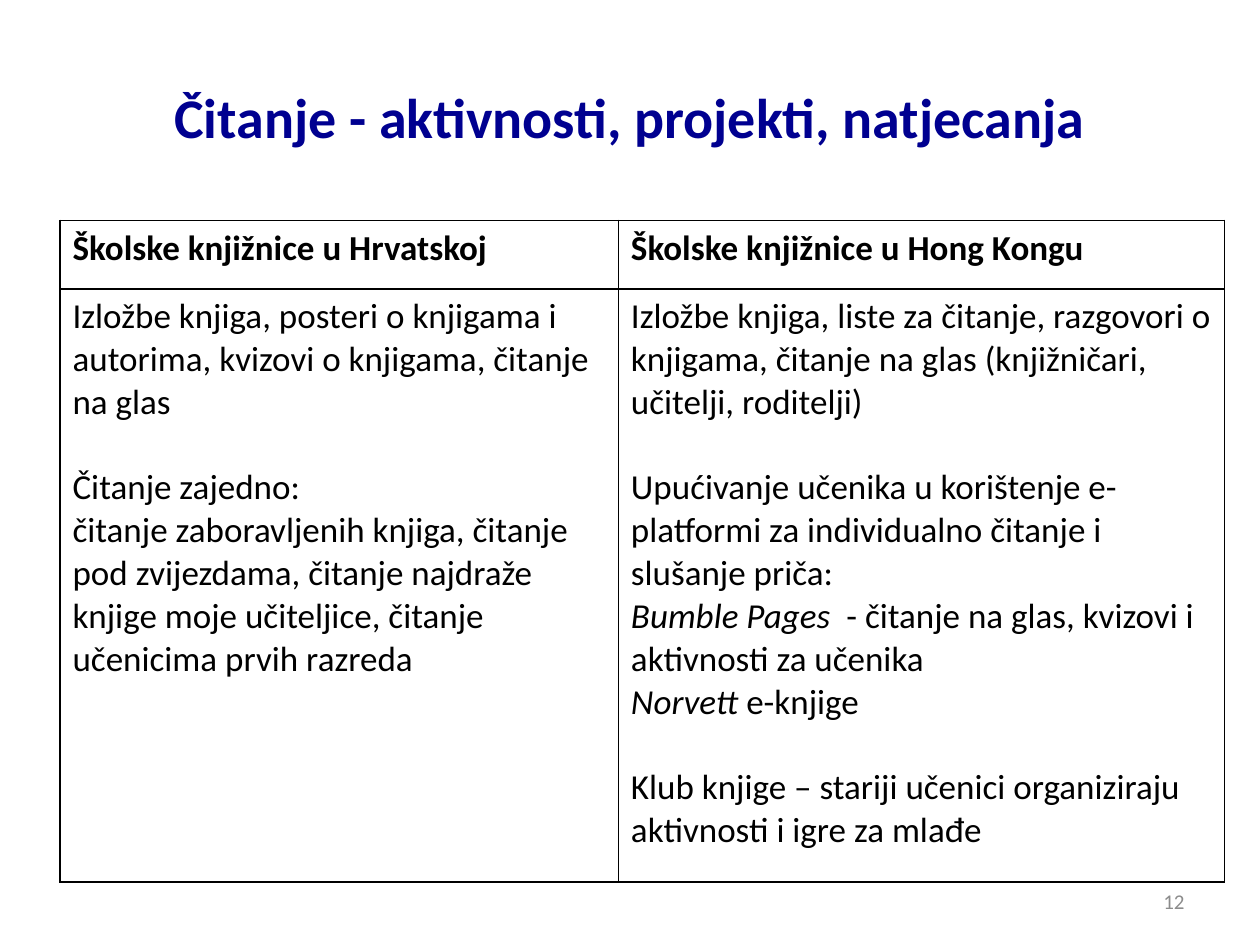
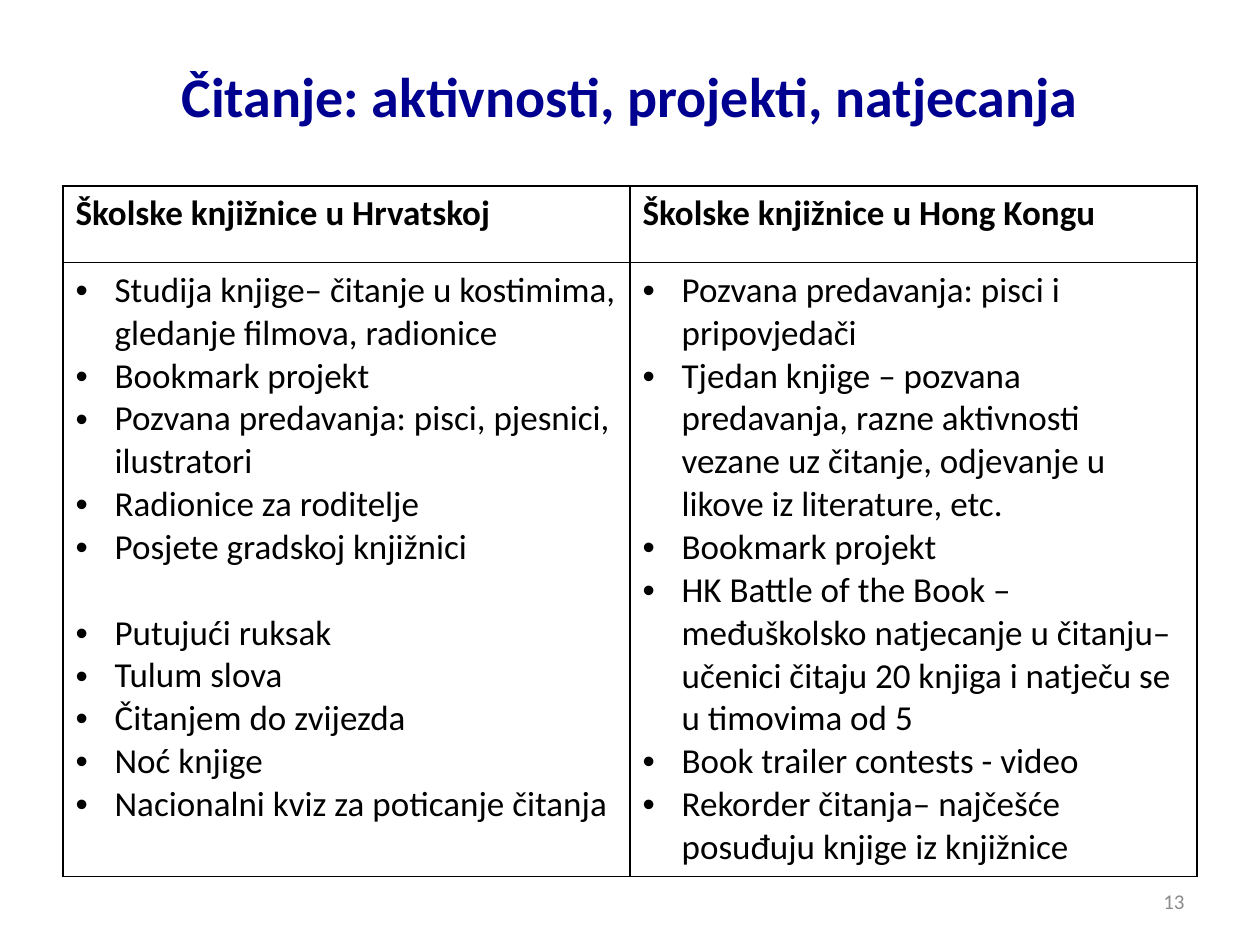
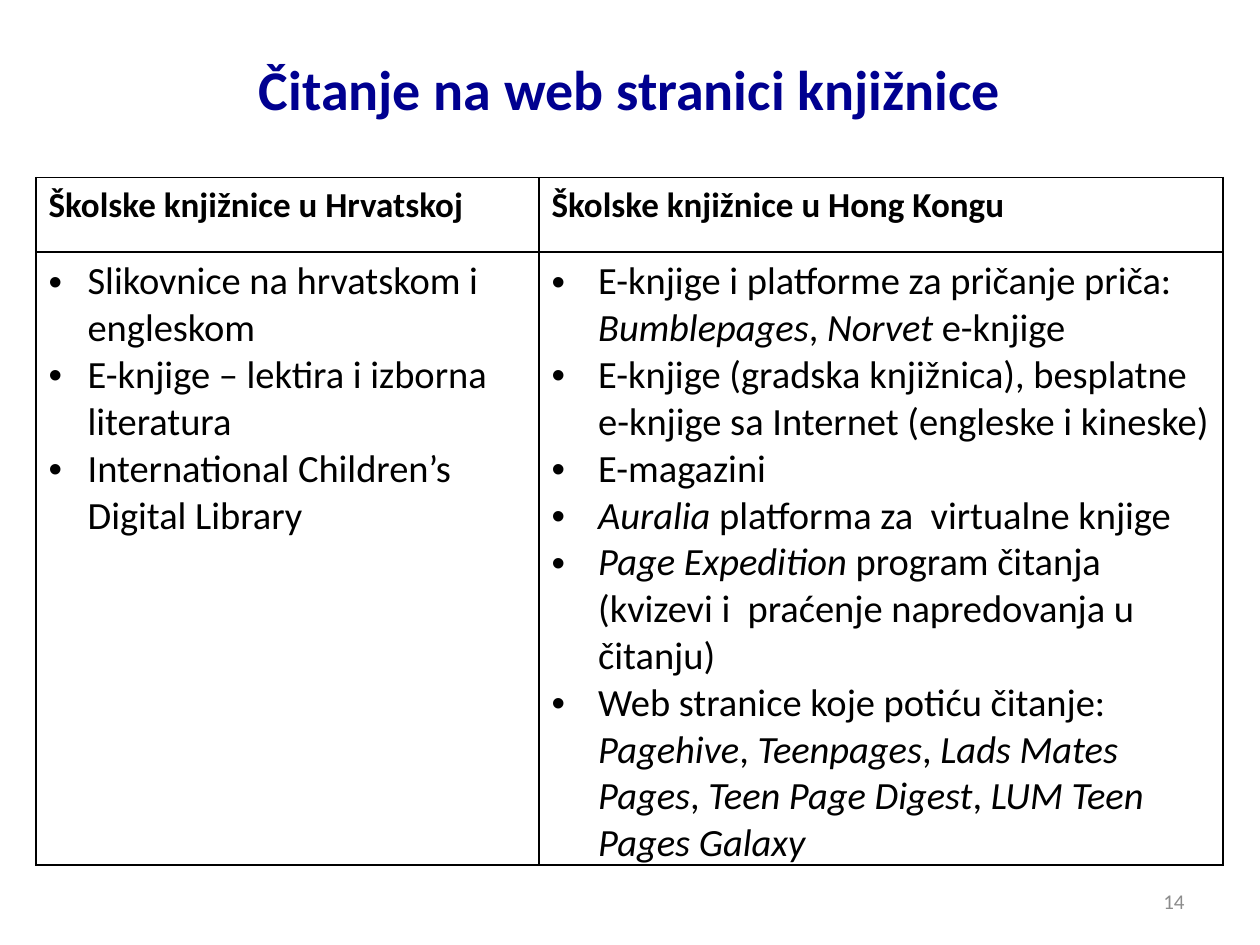
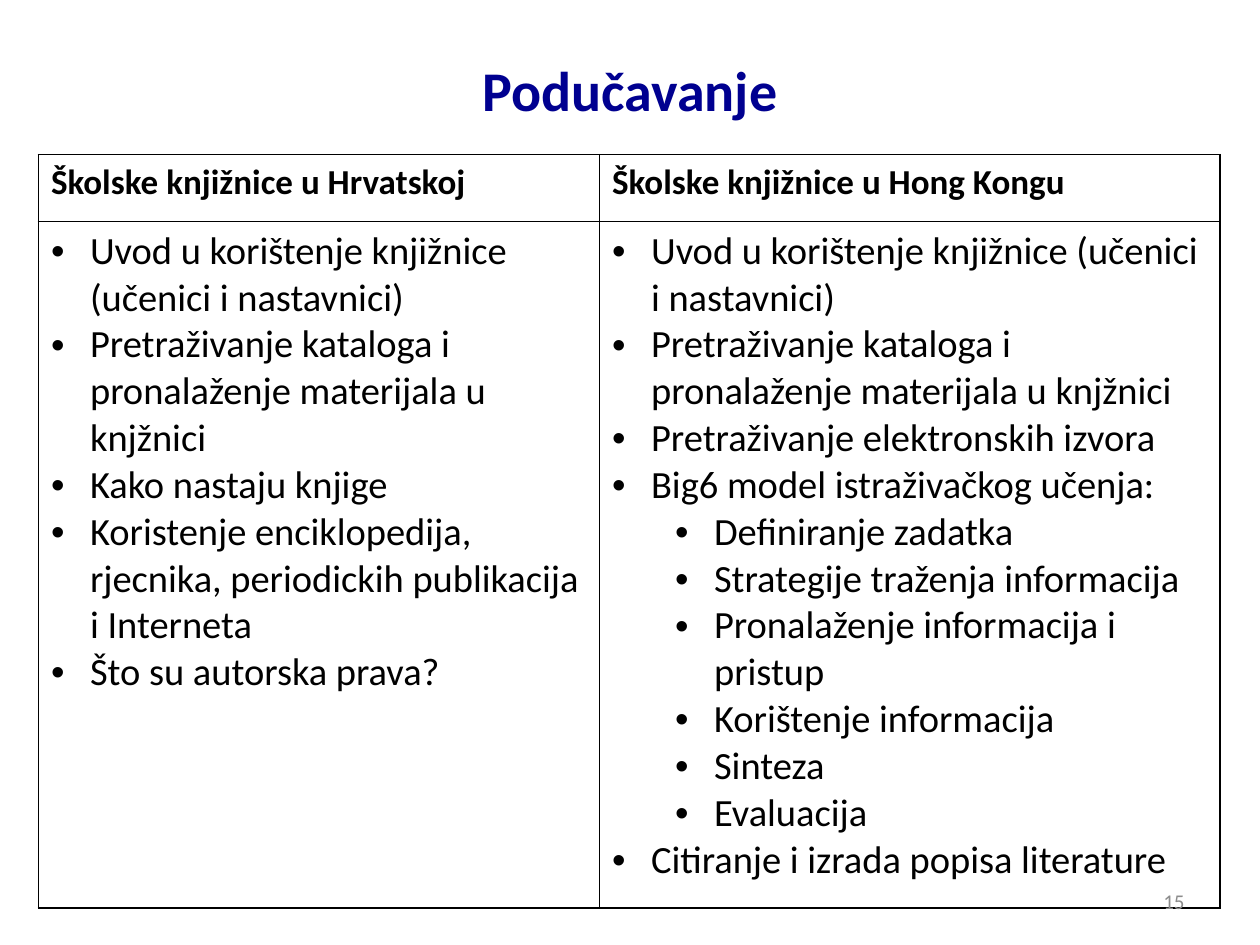
from dataclasses import dataclass

from lxml.etree import SubElement
from pptx import Presentation
from pptx.dml.color import RGBColor
from pptx.enum.text import MSO_ANCHOR as Anchor, PP_ALIGN as Align
from pptx.oxml.ns import qn
from pptx.util import Inches, Pt

# Shared look
SLIDE_WIDTH, SLIDE_HEIGHT = Inches(10), Inches(7.5)
NAVY = RGBColor(0x00, 0x00, 0x90)
BLACK = RGBColor(0x00, 0x00, 0x00)
GREY = RGBColor(0x8C, 0x8C, 0x8C)
TITLE_STYLE = {"name": "Calibri", "size": Pt(32), "bold": True}
HEADING_STYLE = {"name": "Calibri", "size": Pt(20), "bold": True}
BODY_STYLE = {"name": "Calibri", "bold": False}
NUMBER_STYLE = {"name": "Calibri", "size": Pt(12)}
HEADINGS = ("Školske knjižnice u Hrvatskoj", "Školske knjižnice u Hong Kongu")
FIRST_NUMBER = 12
LINE_HEIGHT = 1.22  # of the text size
LEVEL_STEP = 0.5


@dataclass
class Item:
    """A paragraph; *stars* enclose italics, gap leaves one line free above."""
    text: str
    level: int = 0
    gap: bool = False


@dataclass
class Comparison:
    """Two columns side by side; lengths are percentages of the slide."""
    title: str
    title_height: float
    left: float
    top: float
    widths: tuple
    heights: tuple
    croatia: list
    hong_kong: list
    size: int = 20
    hangs: tuple = (0.31, 0.31)  # bullet indents in inches, 0 for plain text


COMPARISONS = [
    Comparison(
        "Čitanje - aktivnosti, projekti, natjecanja", 16.67,
        4.76, 23.33, (44.32, 48.1), (7.25, 62.75),
        [
            "Izložbe knjiga, posteri o knjigama i autorima, kvizovi o knjigama, "
            "čitanje na glas",
            Item("Čitanje zajedno:", gap=True),
            "čitanje zaboravljenih knjiga, čitanje pod zvijezdama, čitanje "
            "najdraže knjige moje učiteljice, čitanje učenicima prvih razreda",
        ],
        [
            "Izložbe knjiga, liste za čitanje, razgovori o knjigama, čitanje na "
            "glas (knjižničari, učitelji, roditelji)",
            Item("Upućivanje učenika u korištenje e-platformi za individualno "
                 "čitanje i slušanje priča:", gap=True),
            "*Bumble Pages  *- čitanje na glas, kvizovi i aktivnosti za učenika",
            "*Norvett* e-knjige",
            Item("Klub knjige – stariji učenici organiziraju aktivnosti i igre "
                 "za mlađe", gap=True),
        ],
        hangs=(0, 0)),
    Comparison(
        "Čitanje: aktivnosti, projekti, natjecanja", 12.1,
        5, 19.67, (45, 45), (8.13, 64.93),
        [
            "Studija knjige– čitanje u kostimima, gledanje filmova, radionice",
            "Bookmark projekt",
            "Pozvana predavanja: pisci, pjesnici, ilustratori",
            "Radionice za roditelje",
            "Posjete gradskoj knjižnici",
            Item("Putujući ruksak", gap=True),
            "Tulum slova",
            "Čitanjem do zvijezda",
            "Noć knjige",
            "Nacionalni kviz za poticanje čitanja",
        ],
        [
            "Pozvana predavanja: pisci i pripovjedači",
            "Tjedan knjige – pozvana predavanja, razne aktivnosti vezane uz "
            "čitanje, odjevanje u likove iz literature, etc.",
            "Bookmark projekt",
            "HK Battle of the Book – međuškolsko natjecanje u čitanju– učenici "
            "čitaju 20 knjiga i natječu se u timovima od 5",
            "Book trailer contests - video",
            "Rekorder čitanja– najčešće posuđuju knjige iz knjižnice",
        ]),
    Comparison(
        "Čitanje na web stranici knjižnice", 10.65,
        2.86, 18.8, (39.92, 54.3), (7.87, 61.6),
        [
            "Slikovnice na hrvatskom i engleskom",
            "E-knjige – lektira i izborna literatura",
            "International Children’s Digital Library",
        ],
        [
            "E-knjige i platforme za pričanje priča: *Bumblepages*, *Norvet* "
            "e-knjige",
            "E-knjige (gradska knjižnica), besplatne e-knjige sa Internet "
            "(engleske i kineske)",
            "E-magazini",
            "*Auralia* platforma za  virtualne knjige",
            "*Page Expedition *program čitanja (kvizevi i  praćenje napredovanja "
            "u čitanju)",
            "Web stranice koje potiću čitanje: *Pagehive*, *Teenpages*, "
            "*Lads Mates Pages*, *Teen Page Digest*, *LUM Teen Pages Galaxy*",
        ],
        size=22, hangs=(0.31, 0.37)),
    Comparison(
        "Podučavanje", 10.8,
        3.05, 16.37, (44.53, 49.25), (7.07, 72.67),
        [
            "Uvod u korištenje knjižnice (učenici i nastavnici)",
            "Pretraživanje kataloga i pronalaženje materijala u knjžnici",
            "Kako nastaju knjige",
            "Koristenje enciklopedija, rjecnika, periodickih publikacija i "
            "Interneta",
            "Što su autorska prava?",
        ],
        [
            "Uvod u korištenje knjižnice (učenici i nastavnici)",
            "Pretraživanje kataloga i pronalaženje materijala u knjžnici",
            "Pretraživanje elektronskih izvora",
            "Big6 model istraživačkog učenja:",
            Item("Definiranje zadatka", level=1),
            Item("Strategije traženja informacija", level=1),
            Item("Pronalaženje informacija i pristup", level=1),
            Item("Korištenje informacija", level=1),
            Item("Sinteza", level=1),
            Item("Evaluacija", level=1),
            "Citiranje i izrada popisa literature",
        ],
        size=22),
]


def across(percent):
    return round(SLIDE_WIDTH * percent / 100)


def down(percent):
    return round(SLIDE_HEIGHT * percent / 100)


# Text
def write(paragraph, text, style, color):
    for index, part in enumerate(text.split("*")):
        if part:
            run = paragraph.add_run()
            run.text = part
            for key, value in style.items():
                setattr(run.font, key, value)
            run.font.color.rgb = color
            if index % 2:
                run.font.italic = True


def add_bullet(paragraph, hang, level):
    properties = paragraph._p.get_or_add_pPr()
    properties.set("marL", str(Inches(hang + level * LEVEL_STEP)))
    properties.set("indent", str(-Inches(hang)))
    SubElement(properties, qn("a:buFont"), typeface="Arial")
    SubElement(properties, qn("a:buChar"), char="•")


def write_items(frame, items, size, hang):
    style = {**BODY_STYLE, "size": Pt(size)}
    for index, entry in enumerate(items):
        item = entry if isinstance(entry, Item) else Item(entry)
        paragraph = frame.add_paragraph() if index else frame.paragraphs[0]
        paragraph.level = item.level
        if hang:
            add_bullet(paragraph, hang, item.level)
        if item.gap:
            paragraph.space_before = Pt(size * LINE_HEIGHT)
        write(paragraph, item.text, style, BLACK)


def add_line_box(slide, text, box, style, color, align):
    frame = slide.shapes.add_textbox(*box).text_frame
    frame.word_wrap = True
    frame.vertical_anchor = Anchor.MIDDLE
    frame.paragraphs[0].alignment = align
    write(frame.paragraphs[0], text, style, color)


# Table
def draw_borders(cell):
    properties = cell._tc.get_or_add_tcPr()
    for side in ("lnL", "lnR", "lnT", "lnB"):
        line = SubElement(properties, qn(f"a:{side}"), w=str(Pt(1)))
        fill = SubElement(line, qn("a:solidFill"))
        SubElement(fill, qn("a:srgbClr"), val=str(BLACK))


def add_comparison_table(slide, comparison):
    widths = [across(width) for width in comparison.widths]
    heights = [down(height) for height in comparison.heights]
    table = slide.shapes.add_table(
        len(heights), len(widths), across(comparison.left),
        down(comparison.top), sum(widths), sum(heights)).table
    table.first_row = table.horz_banding = False
    for row, height in zip(table.rows, heights):
        row.height = height
    for column, width in zip(table.columns, widths):
        column.width = width
    for cell in table.iter_cells():
        draw_borders(cell)
        cell.fill.background()
    bodies = (comparison.croatia, comparison.hong_kong)
    for index, (heading, items) in enumerate(zip(HEADINGS, bodies)):
        write(table.cell(0, index).text_frame.paragraphs[0], heading,
              HEADING_STYLE, BLACK)
        write_items(table.cell(1, index).text_frame, items,
                    comparison.size, comparison.hangs[index])


def add_comparison_slide(deck, comparison, number):
    slide = deck.slides.add_slide(deck.slide_layouts[6])
    title_box = across(5), down(4), across(90), down(comparison.title_height)
    number_box = across(71.7), down(92.67), across(23.3), down(5.33)
    add_line_box(slide, comparison.title, title_box, TITLE_STYLE, NAVY,
                 Align.CENTER)
    add_comparison_table(slide, comparison)
    add_line_box(slide, str(number), number_box, NUMBER_STYLE, GREY,
                 Align.RIGHT)


def main():
    deck = Presentation()
    deck.slide_width, deck.slide_height = SLIDE_WIDTH, SLIDE_HEIGHT
    for number, comparison in enumerate(COMPARISONS, FIRST_NUMBER):
        add_comparison_slide(deck, comparison, number)
    deck.save("out.pptx")


if __name__ == "__main__":
    main()
